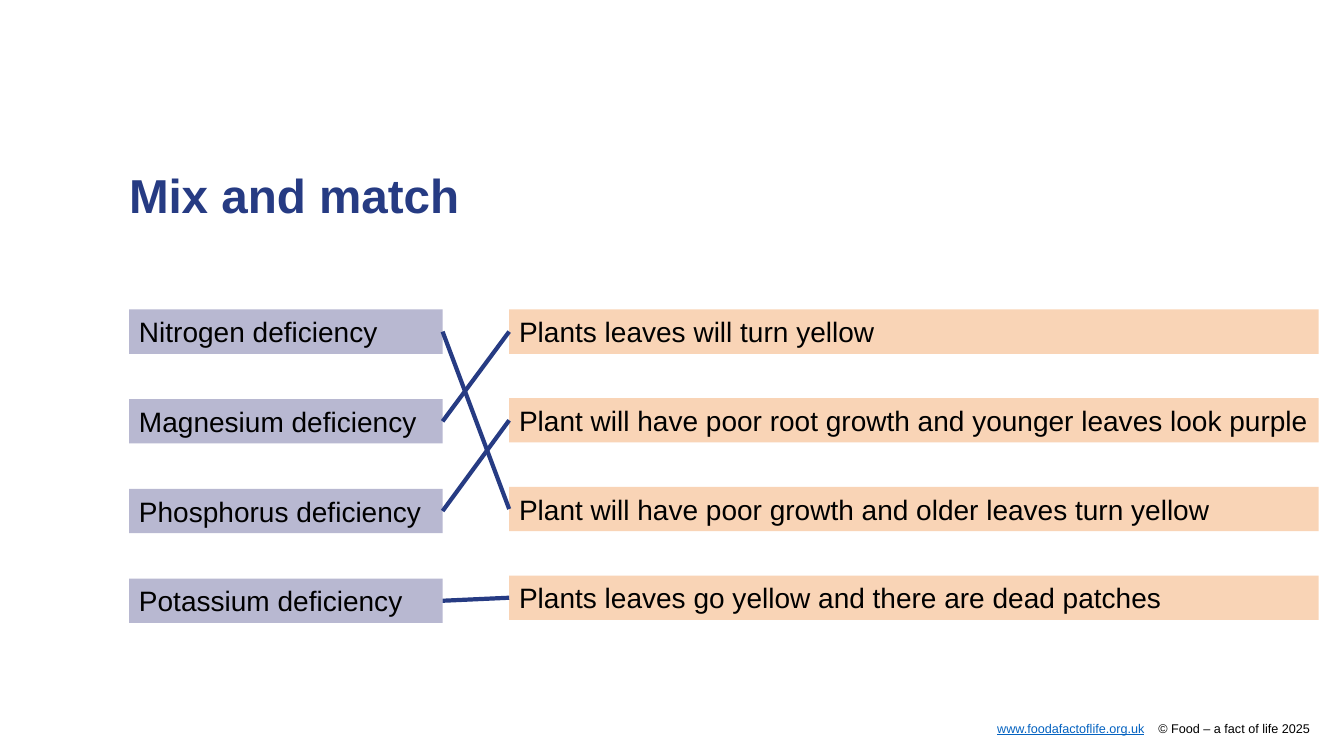
from dataclasses import dataclass

from lxml.etree import SubElement
from pptx import Presentation
from pptx.dml.color import RGBColor
from pptx.enum.shapes import MSO_CONNECTOR, MSO_SHAPE
from pptx.enum.text import MSO_ANCHOR, PP_ALIGN
from pptx.oxml.ns import qn
from pptx.util import Inches, Pt


@dataclass(frozen=True)
class Theme:
    """Colours, font and type sizes of the slide."""
    navy: str = "263B83"
    lilac: str = "B8B8D1"
    peach: str = "F9D4B6"
    black: str = "000000"
    link: str = "0563C1"
    font: str = "Arial"
    title: int = 34
    body: int = 20
    foot: int = 9


THEME = Theme()
TOP = 3.07
CAUSES = ["Nitrogen deficiency", "Magnesium deficiency",
          "Phosphorus deficiency", "Potassium deficiency"]
SIGNS = ["Plants leaves will turn yellow",
         "Plant will have poor root growth and younger leaves look purple",
         "Plant will have poor growth and older leaves turn yellow",
         "Plants leaves go yellow and there are dead patches"]
MATCHES = [2, 0, 1, 3]


def add_run(para, text, size, color, bold=False, under=False):
    """Add one styled run to a paragraph."""
    run = para.add_run()
    run.text = text
    font = run.font
    font.name, font.size = THEME.font, Pt(size)
    font.bold, font.underline = bold, under
    font.color.rgb = RGBColor.from_string(color)


def add_text(slide, left, top, width, height):
    """Add a text box without insets and return its first paragraph."""
    box = slide.shapes.add_textbox(
        Inches(left), Inches(top), Inches(width), Inches(height))
    frame = box.text_frame
    frame.word_wrap = True
    frame.margin_left = frame.margin_right = 0
    frame.margin_top = frame.margin_bottom = 0
    return frame.paragraphs[0]


def add_tabs(para, stops):
    """Give a paragraph tab stops from (inches, alignment) pairs."""
    tabs = SubElement(para._p.get_or_add_pPr(), qn("a:tabLst"))
    for place, align in stops:
        SubElement(tabs, qn("a:tab"), pos=str(Inches(place)), algn=align)


def add_card(slide, text, left, top, width, fill):
    """Add one filled answer card."""
    card = slide.shapes.add_shape(
        MSO_SHAPE.RECTANGLE,
        Inches(left), Inches(top), Inches(width), Inches(0.44))
    card.shadow.inherit = False
    card.fill.solid()
    card.fill.fore_color.rgb = RGBColor.from_string(fill)
    card.line.fill.background()
    frame = card.text_frame
    frame.word_wrap = True
    frame.margin_right = Inches(0.05)
    frame.vertical_anchor = MSO_ANCHOR.MIDDLE
    para = frame.paragraphs[0]
    para.alignment = PP_ALIGN.LEFT
    add_run(para, text, THEME.body, THEME.black)
    return card


def add_column(slide, texts, left, width, step, fill):
    """Add evenly spaced cards and return them."""
    return [add_card(slide, text, left, TOP + step * row, width, fill)
            for row, text in enumerate(texts)]


def add_link(slide, cause, sign):
    """Join the right side of one card to the left side of another."""
    line = slide.shapes.add_connector(MSO_CONNECTOR.STRAIGHT, 0, 0, 0, 0)
    line.begin_connect(cause, 3)
    line.end_connect(sign, 1)
    line.line.width = Pt(3)
    line.line.color.rgb = RGBColor.from_string(THEME.navy)
    SubElement(line._element.spPr, qn("a:effectLst"))


def add_footer(slide):
    """Add the web address and copyright line."""
    para = add_text(slide, 1.26, 7.15, 11.9, 0.15)
    add_tabs(para, [(10.09, "r"), (10.23, "l")])
    add_run(para, "\t", THEME.foot, THEME.black)
    add_run(para, "www.foodafactoflife.org.uk", THEME.foot, THEME.link,
            under=True)
    add_run(para, "\t© Food – a fact of life 2025", THEME.foot, THEME.black)


def main():
    """Build and save the slide."""
    deck = Presentation()
    deck.slide_width, deck.slide_height = Inches(13.33), Inches(7.5)
    slide = deck.slides.add_slide(deck.slide_layouts[6])
    add_footer(slide)
    title = add_text(slide, 1.28, 1.71, 10.63, 0.79)
    title.line_spacing = 0.9
    add_run(title, "Mix and match", THEME.title, THEME.navy, bold=True)
    causes = add_column(slide, CAUSES, 1.28, 3.11, 0.89, THEME.lilac)
    signs = add_column(slide, SIGNS, 5.05, 8.03, 0.88, THEME.peach)
    for cause, match in zip(causes, MATCHES):
        add_link(slide, cause, signs[match])
    deck.save("out.pptx")


if __name__ == "__main__":
    main()
